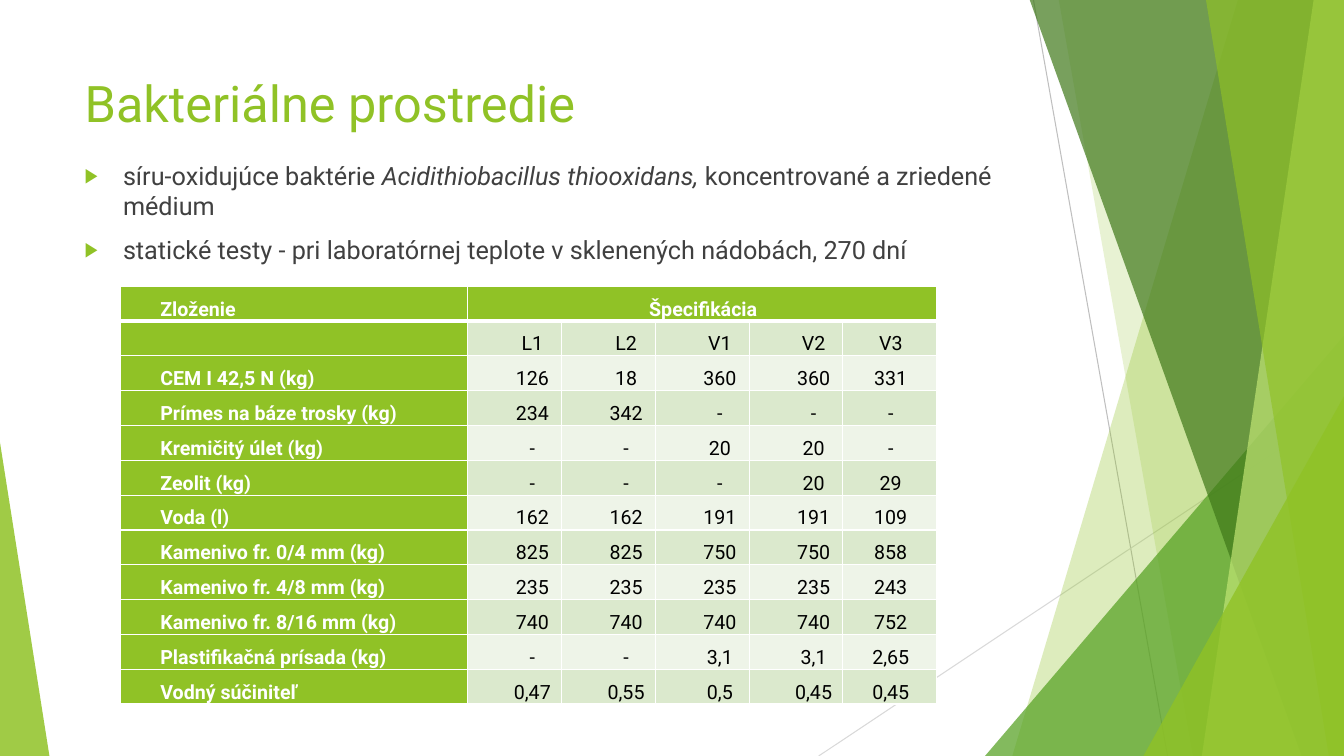
"""Build a slide on the bacterial medium, with a table of concrete mixes."""
from lxml import etree
from pptx import Presentation
from pptx.dml.color import RGBColor
from pptx.enum.shapes import MSO_CONNECTOR, MSO_SHAPE
from pptx.enum.text import MSO_ANCHOR, MSO_AUTO_SIZE, PP_ALIGN
from pptx.oxml.ns import qn
from pptx.util import Inches, Pt

LINE = MSO_CONNECTOR.STRAIGHT
TRI = MSO_SHAPE.ISOSCELES_TRIANGLE
TOP, MID = MSO_ANCHOR.TOP, MSO_ANCHOR.MIDDLE
LEFT, CENTER, JUST = PP_ALIGN.LEFT, PP_ALIGN.CENTER, PP_ALIGN.JUSTIFY
FIXED = MSO_AUTO_SIZE.NONE
FONT = "Roboto"
HEX = {
    "lime": "90C226", "green": "54A021", "dark": "3F7819", "pale": "C0E474",
    "band": "DBE9CD", "light": "EEF4E8", "white": "FFFFFF", "black": "000000",
    "text": "404040", "gray": "BFBFBF", "silver": "D9D9D9",
}


def write(para, text, size=14, color="text", bold=False, italic=False,
          align=LEFT, left=0, first=0, lines=1.0, before=0):
    """Add a run to a paragraph and format both."""
    run = para.add_run()
    run.text = text
    font = run.font
    font.name, font.size, font.bold, font.italic = FONT, Pt(size), bold, italic
    font.color.rgb = RGBColor.from_string(HEX[color])
    para.alignment, para.line_spacing = align, lines
    para.space_before = Pt(before)
    props = para._p.get_or_add_pPr()
    props.set("marL", str(Inches(left)))
    props.set("indent", str(Inches(first)))


def paint(shape, color, alpha):
    """Give a shape a see-through fill with no line or shadow."""
    shape.shadow.inherit = False
    shape.line.fill.background()
    shape.fill.solid()
    shape.fill.fore_color.rgb = RGBColor.from_string(HEX[color])
    tint = shape.element.spPr.find(qn("a:solidFill"))[0]
    etree.SubElement(tint, qn("a:alpha"), val=str(alpha * 1000))


deck = Presentation()
deck.slide_width, deck.slide_height = Inches(13.33), Inches(7.5)
slide = deck.slides.add_slide(deck.slide_layouts[1])
shapes = slide.shapes

for x1, y1, x2, y2, color in [(10.25, 0, 11.58, 7.5, "gray"),
                              (13.33, 4.03, 8.12, 7.5, "silver")]:
    line = shapes.add_connector(LINE, Inches(x1), Inches(y1), Inches(x2), Inches(y2))
    line.line.color.rgb = RGBColor.from_string(HEX[color])
    line.line.width = Pt(0.75)
    etree.SubElement(line.element.spPr, qn("a:effectLst"))

facets = [
    ("blade", (12.28, 10.04), "lime", 30),
    ("blade", (10.5, 11.83), "lime", 20),
    ("peak", (9.77, 3.33, 3.56, 4.17, 1), "green", 72),
    ("blade", (10.21, 12.91), "dark", 70),
    ("blade", (13.03, 11.92), "pale", 70),
    ("blade", (11.96, 13.18), "lime", 65),
    ("peak", (11.34, 3.93, 1.99, 3.57, 1), "lime", 80),
    ("peak", (0, 4.39, 0.49, 3.11, 0), "lime", 85),
]
for kind, dims, color, alpha in facets:
    if kind == "blade":
        high, low = dims
        pen = shapes.build_freeform(Inches(high), Inches(-0.01))
        pen.add_line_segments([(Inches(x), Inches(y)) for x, y in
                               [(13.33, -0.01), (13.33, 7.5), (low, 7.5)]])
        facet = pen.convert_to_shape()
    else:
        facet = shapes.add_shape(TRI, *[Inches(d) for d in dims[:4]])
        facet.adjustments[0] = dims[4]
    paint(facet, color, alpha)

title, body = shapes.title, slide.placeholders[1]
for box, top, height in [(title, 0.67, 1.44), (body, 1.54, 4.24)]:
    box.left, box.top = Inches(0.74), Inches(top)
    box.width, box.height = Inches(9.4), Inches(height)
    frame = box.text_frame
    frame.word_wrap, frame.auto_size = True, FIXED
    frame.vertical_anchor = TOP
    box.element.getparent().append(box.element)
write(title.text_frame.paragraphs[0], "Bakteriálne prostredie", size=36, color="lime")

points = [
    [("síru-oxidujúce baktérie ", False),
     ("Acidithiobacillus thiooxidans, ", True),
     ("koncentrované a zriedené médium", False)],
    [("statické testy - pri laboratórnej teplote v sklenených nádobách, 270 dní", False)],
]
for i, point in enumerate(points):
    para = body.text_frame.add_paragraph() if i else body.text_frame.paragraphs[0]
    for text, slant in point:
        write(para, text, size=18, italic=slant, left=0.38, first=-0.38, before=10)
    props = para._p.get_or_add_pPr()
    hue = etree.SubElement(props, qn("a:buClr"))
    etree.SubElement(hue, qn("a:srgbClr"), val=HEX["lime"])
    etree.SubElement(props, qn("a:buSzPct"), val="80000")
    etree.SubElement(props, qn("a:buFont"), typeface="Arial")
    etree.SubElement(props, qn("a:buChar"), char="▶")

rows = [
    ["Zloženie", "Špecifikácia", "", "", "", ""],
    ["", "L1", "L2", "V1", "V2", "V3"],
    ["CEM I 42,5 N (kg)", "126", "18", "360", "360", "331"],
    ["Prímes na báze trosky (kg)", "234", "342", "-", "-", "-"],
    ["Kremičitý úlet (kg)", "-", "-", "20", "20", "-"],
    ["Zeolit (kg)", "-", "-", "-", "20", "29"],
    ["Voda (l)", "162", "162", "191", "191", "109"],
    ["Kamenivo fr. 0/4 mm (kg)", "825", "825", "750", "750", "858"],
    ["Kamenivo fr. 4/8 mm (kg)", "235", "235", "235", "235", "243"],
    ["Kamenivo fr. 8/16 mm (kg)", "740", "740", "740", "740", "752"],
    ["Plastifikačná prísada (kg)", "-", "-", "3,1", "3,1", "2,65"],
    ["Vodný súčiniteľ", "0,47", "0,55", "0,5", "0,45", "0,45"],
]
grid = shapes.add_table(len(rows), 6, Inches(1.19), Inches(2.84),
                        Inches(8.1), Inches(3.71)).table
for c in range(6):
    grid.columns[c].width = Inches(0.93 if c else 3.45)
for r, row in enumerate(rows):
    grid.rows[r].height = Inches(0.31 if r else 0.23)
    for c, text in enumerate(row):
        cell = grid.cell(r, c)
        head = r == 0 or c == 0
        cell.margin_left = cell.margin_right = Inches(0.05)
        cell.margin_top = cell.margin_bottom = 0
        cell.vertical_anchor = TOP if r else MID
        cell.fill.solid()
        shade = "lime" if head else "band" if r % 2 else "light"
        cell.fill.fore_color.rgb = RGBColor.from_string(HEX[shade])
        if text:
            inset = 0.02 if c == 5 or (r == 0 and c) else 0.35
            align = CENTER if c else JUST if r else LEFT
            write(cell.text_frame.paragraphs[0], text, bold=head, align=align,
                  color="white" if head else "black", first=inset, lines=1.5)
        props = cell._tc.get_or_add_tcPr()
        for i, side in enumerate(["lnL", "lnR", "lnT", "lnB"]):
            thick = (r, side) in [(0, "lnB"), (1, "lnT")]
            edge = etree.Element(qn("a:" + side), w=str(Pt(3 if thick else 1)))
            fill = etree.SubElement(edge, qn("a:solidFill"))
            etree.SubElement(fill, qn("a:srgbClr"), val=HEX["white"])
            props.insert(i, edge)
grid.cell(0, 1).merge(grid.cell(0, 5))

deck.save("out.pptx")
